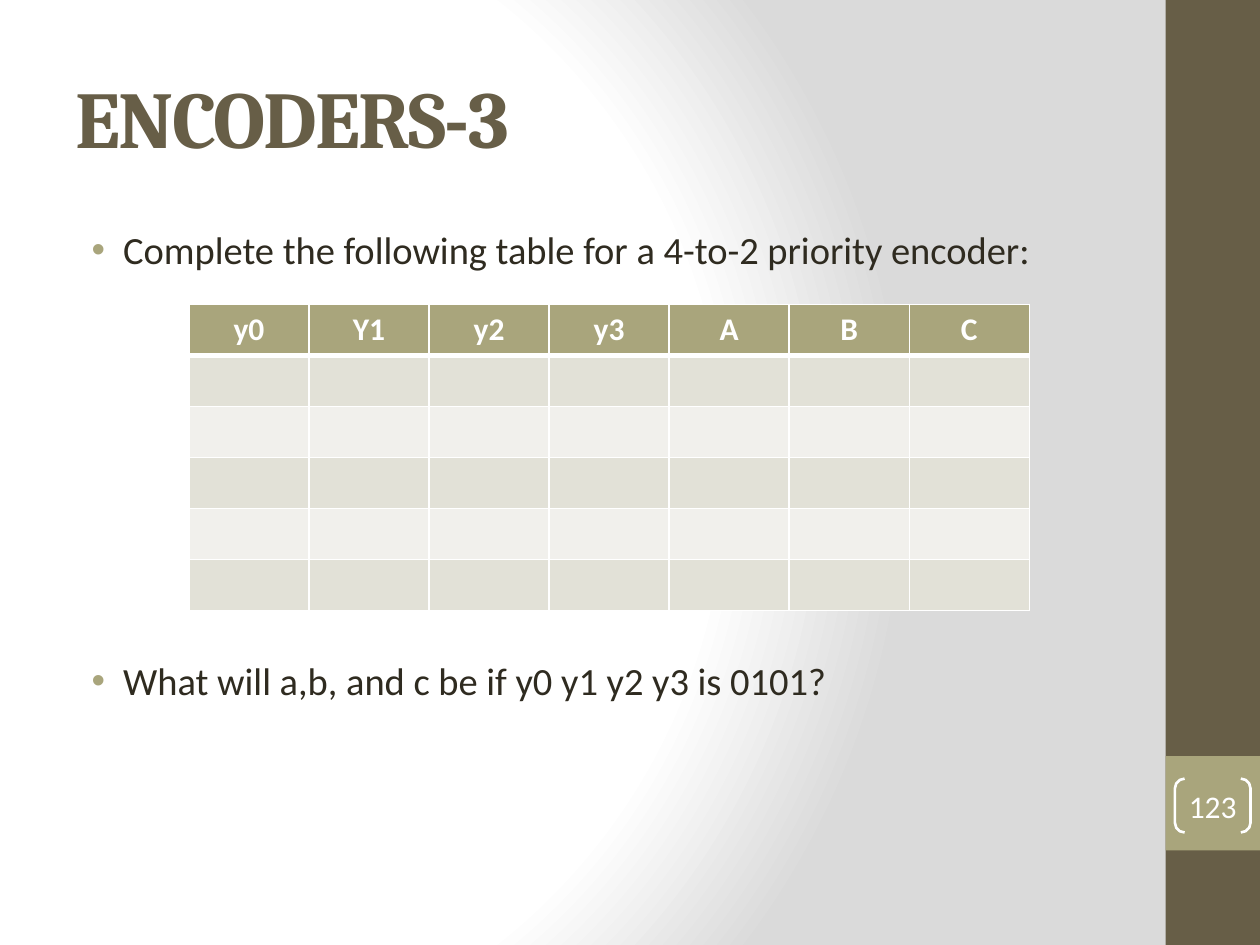
from dataclasses import dataclass

from pptx import Presentation
from pptx.dml.color import RGBColor
from pptx.enum.shapes import MSO_SHAPE
from pptx.enum.text import MSO_ANCHOR, PP_ALIGN
from pptx.oxml import parse_xml
from pptx.oxml.ns import nsdecls
from pptx.util import Inches, Pt


@dataclass(frozen=True)
class Theme:
    brown: str = "675E47"
    olive: str = "A9A57C"
    ink: str = "2F2B20"
    white: str = "FFFFFF"
    grey: str = "DADADA"
    bands: tuple = ("E2E1D7", "F1F0EC")
    heading_font: str = "Cambria"
    body_font: str = "Calibri"
    title_size: int = 46
    body_size: int = 22
    small_size: int = 18


@dataclass(frozen=True)
class Box:
    left: float
    top: float
    width: float
    height: float

    def area(self, x, y, w, h):
        return Box(self.left + x * self.width, self.top + y * self.height,
                   w * self.width, h * self.height)

    def place(self):
        return [Inches(v) for v in (self.left, self.top, self.width, self.height)]


THEME = Theme()
PAGE = Box(0, 0, 10, 7.5)
HEADINGS = ["y0", "Y1", "y2", "y3", "A", "B", "C"]
BLANK_ROWS = 5
QUESTIONS = [
    ("Complete the following table for a 4-to-2 priority encoder:", 0),
    ("What will a,b, and c be if y0 y1 y2 y3 is 0101?", 219.5),
]


def rgb(color):
    return RGBColor.from_string(color)


def add_run(paragraph, text, size, color, font=THEME.body_font, bold=False):
    run = paragraph.add_run()
    run.text = text
    run.font.size = Pt(size)
    run.font.name = font
    run.font.bold = bold
    run.font.color.rgb = rgb(color)
    return run


def add_frame(slide, box, anchor):
    frame = slide.shapes.add_textbox(*box.place()).text_frame
    frame.word_wrap = True
    frame.vertical_anchor = anchor
    return frame


def add_background(slide):
    stops = "".join(
        f'<a:gs pos="{share * 1000}"><a:srgbClr val="{color}"/></a:gs>'
        for share, color in ((0, THEME.white), (75, THEME.white), (100, THEME.grey)))
    slide.element.cSld.insert(0, parse_xml(
        f'<p:bg {nsdecls("p", "a")}><p:bgPr><a:gradFill rotWithShape="1">'
        f'<a:gsLst>{stops}</a:gsLst><a:path path="circle">'
        '<a:fillToRect l="20000" t="50000" r="100000" b="50000"/></a:path>'
        '</a:gradFill><a:effectLst/></p:bgPr></p:bg>'))


def add_sidebar(slide, box, number):
    badge = box.area(0, 0.8, 1, 0.1)
    for region, color in ((box, THEME.brown), (badge, THEME.olive)):
        panel = slide.shapes.add_shape(MSO_SHAPE.RECTANGLE, *region.place())
        panel.shadow.inherit = False
        panel.fill.solid()
        panel.fill.fore_color.rgb = rgb(color)
        panel.line.fill.background()

    bracket = slide.shapes.add_shape(
        MSO_SHAPE.DOUBLE_BRACKET, *badge.area(0.1, 0.24, 0.8, 0.57).place())
    bracket.adjustments[0] = 0.18
    bracket.shadow.inherit = False
    bracket.fill.background()
    bracket.line.color.rgb = rgb(THEME.white)
    bracket.line.width = Pt(1.5)
    frame = bracket.text_frame
    frame.margin_left = frame.margin_right = frame.margin_top = frame.margin_bottom = 0
    frame.vertical_anchor = MSO_ANCHOR.MIDDLE
    frame.paragraphs[0].alignment = PP_ALIGN.CENTER
    add_run(frame.paragraphs[0], number, THEME.small_size, THEME.white)


def add_title(slide, box, text):
    frame = add_frame(slide, box, MSO_ANCHOR.MIDDLE)
    run = add_run(frame.paragraphs[0], text, THEME.title_size, THEME.brown,
                  THEME.heading_font, True)
    run._r.get_or_add_rPr().set("spc", "-100")


def add_questions(slide, box, questions):
    frame = add_frame(slide, box, MSO_ANCHOR.TOP)
    for index, (question, gap) in enumerate(questions):
        paragraph = frame.add_paragraph() if index else frame.paragraphs[0]
        paragraph.space_before = Pt(gap)
        properties = paragraph._p.get_or_add_pPr()
        properties.set("marL", str(Inches(0.38)))
        properties.set("indent", str(Inches(-0.25)))
        for bullet in (f'<a:buClr {nsdecls("a")}><a:srgbClr val="{THEME.olive}"/></a:buClr>',
                       f'<a:buFont {nsdecls("a")} typeface="Arial"/>',
                       f'<a:buChar {nsdecls("a")} char="•"/>'):
            properties.append(parse_xml(bullet))
        add_run(paragraph, question, THEME.body_size, THEME.ink)


def style_cell(cell, color, top, bottom):
    properties = cell._tc.get_or_add_tcPr()
    for side, width in (("L", 1), ("R", 1), ("T", top), ("B", bottom)):
        properties.append(parse_xml(
            f'<a:ln{side} {nsdecls("a")} w="{Pt(width)}"><a:solidFill>'
            f'<a:srgbClr val="{THEME.white}"/></a:solidFill></a:ln{side}>'))
    cell.fill.solid()
    cell.fill.fore_color.rgb = rgb(color)


def add_truth_table(slide, box, headings, blank_rows):
    rows = blank_rows + 1
    table = slide.shapes.add_table(rows, len(headings), *box.place()).table
    for column in table.columns:
        column.width = Inches(box.width / len(headings))
    for row in table.rows:
        row.height = Inches(box.height / rows)
    for index, heading in enumerate(headings):
        header = table.cell(0, index)
        style_cell(header, THEME.olive, 1, 3)
        header.vertical_anchor = MSO_ANCHOR.MIDDLE
        paragraph = header.text_frame.paragraphs[0]
        paragraph.alignment = PP_ALIGN.CENTER
        add_run(paragraph, heading, THEME.small_size, THEME.white, bold=True)
        for row in range(1, rows):
            band = THEME.bands[(row - 1) % len(THEME.bands)]
            style_cell(table.cell(row, index), band, 3 if row == 1 else 1, 1)


def main():
    deck = Presentation()
    deck.slide_width, deck.slide_height = Inches(PAGE.width), Inches(PAGE.height)
    slide = deck.slides.add_slide(deck.slide_layouts[6])
    add_background(slide)
    add_sidebar(slide, PAGE.area(0.925, 0, 0.075, 1), "123")
    add_title(slide, PAGE.area(0.05, 0.04, 0.833, 0.167), "ENCODERS-3")
    add_questions(slide, PAGE.area(0.05, 0.233, 0.833, 0.7), QUESTIONS)
    add_truth_table(slide, PAGE.area(0.15, 0.322, 0.667, 0.324), HEADINGS, BLANK_ROWS)
    deck.save("out.pptx")


if __name__ == "__main__":
    main()
